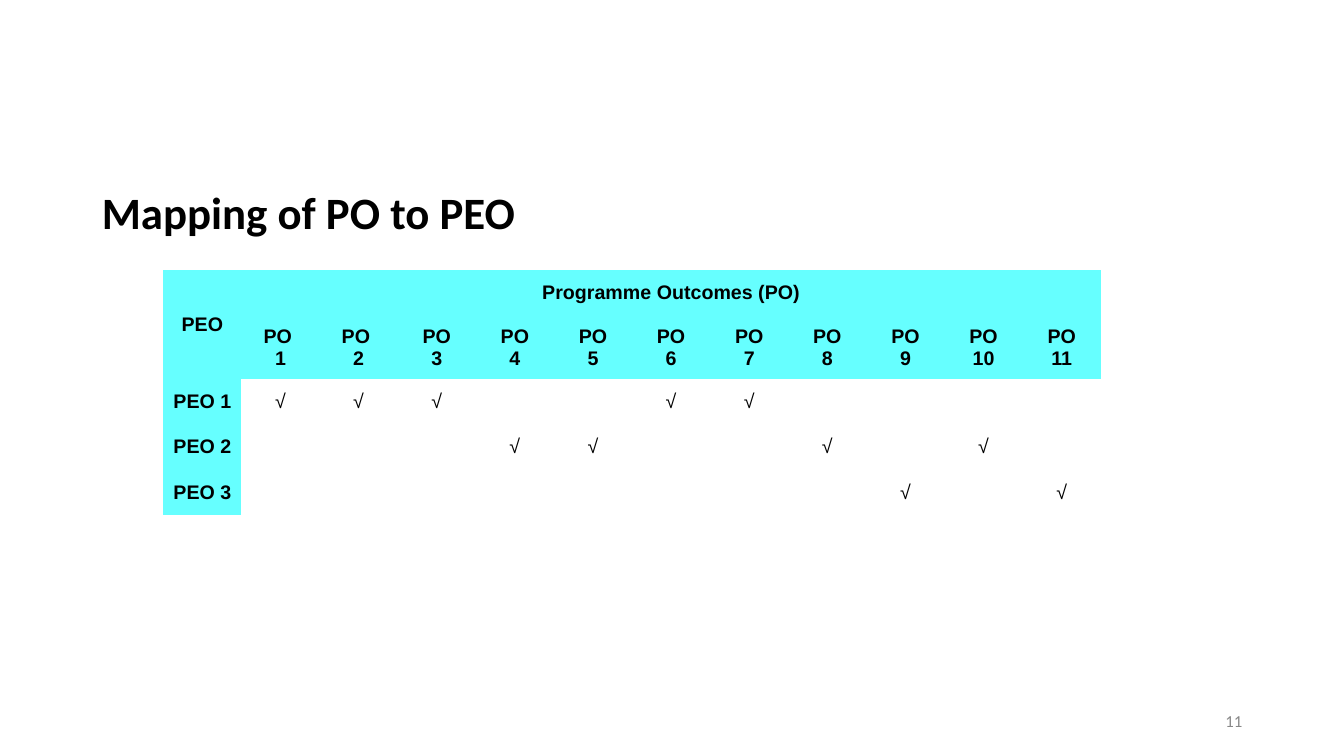
from pptx import Presentation
from pptx.dml.color import RGBColor
from pptx.enum.text import MSO_ANCHOR as Anchor, PP_ALIGN as Align
from pptx.oxml.ns import qn
from pptx.util import Inches, Pt

BLACK = RGBColor(0x00, 0x00, 0x00)
GREY = RGBColor(0x88, 0x88, 0x88)
CYAN = RGBColor(0x66, 0xFF, 0xFF)

TITLE_FONT = {"name": "Calibri", "size": Pt(32), "bold": True}
HEAD_FONT = {"name": "Arial", "size": Pt(14), "bold": True}
MARK_FONT = {"name": "Arial", "size": Pt(14), "bold": False}
NUMBER_FONT = {"name": "Calibri", "size": Pt(12)}

NO_GRID_STYLE = "{2D5ABB26-0587-4C30-8999-92F81FD0307C}"
OUTCOMES = 11
MAPPING = {
    "PEO 1": (1, 2, 3, 6, 7),
    "PEO 2": (4, 5, 8, 10),
    "PEO 3": (9, 11),
}


def write(tf, lines, font, color=BLACK, align=Align.CENTER):
    for i, line in enumerate(lines):
        p = tf.paragraphs[0] if i == 0 else tf.add_paragraph()
        p.alignment = align
        r = p.add_run()
        r.text = line
        for key, value in font.items():
            setattr(r.font, key, value)
        r.font.color.rgb = color


def add_title(s, text):
    sp = s.shapes.title
    sp.left, sp.top = Inches(0.91), Inches(1.79)
    sp.width, sp.height = Inches(11.5), Inches(0.69)
    tf = sp.text_frame
    tf.vertical_anchor = Anchor.MIDDLE
    write(tf, [text], TITLE_FONT, align=Align.LEFT)
    tf.paragraphs[0].line_spacing = 0.9


def fill_cell(cell, lines, font=HEAD_FONT, fill=CYAN):
    cell.vertical_anchor = Anchor.MIDDLE
    if fill is None:
        cell.fill.background()
    else:
        cell.fill.solid()
        cell.fill.fore_color.rgb = fill
    write(cell.text_frame, lines, font)


def add_mapping_table(s):
    frame = s.shapes.add_table(
        2 + len(MAPPING), 1 + OUTCOMES,
        Inches(1.62), Inches(2.68), Inches(9.3), Inches(2.44))
    table = frame.table
    table.first_row = table.horz_banding = False
    style = frame._element.find(".//" + qn("a:tableStyleId"))
    style.text = NO_GRID_STYLE

    for i, row in enumerate(table.rows):
        row.height = Inches(0.63 if i == 1 else 0.45)

    table.cell(0, 0).merge(table.cell(1, 0))
    table.cell(0, 1).merge(table.cell(0, OUTCOMES))
    fill_cell(table.cell(0, 0), ["PEO"])
    fill_cell(table.cell(0, 1), ["Programme Outcomes (PO)"])
    for n in range(1, OUTCOMES + 1):
        fill_cell(table.cell(1, n), ["PO " if n < 3 else "PO", str(n)])

    for i, (objective, outcomes) in enumerate(MAPPING.items(), 2):
        fill_cell(table.cell(i, 0), [objective])
        for n in range(1, OUTCOMES + 1):
            marks = ["√"] if n in outcomes else []
            fill_cell(table.cell(i, n), marks, MARK_FONT, None)


def add_slide_number(s, text):
    sp = s.shapes.add_textbox(
        Inches(9.42), Inches(6.95), Inches(3), Inches(0.4))
    tf = sp.text_frame
    tf.word_wrap = True
    tf.vertical_anchor = Anchor.MIDDLE
    write(tf, [text], NUMBER_FONT, GREY, Align.RIGHT)


def main():
    prs = Presentation()
    prs.slide_width, prs.slide_height = Inches(13.33), Inches(7.5)
    s = prs.slides.add_slide(prs.slide_layouts[5])
    add_title(s, "Mapping of PO to PEO")
    add_mapping_table(s)
    add_slide_number(s, "11")
    prs.save("out.pptx")


if __name__ == "__main__":
    main()
